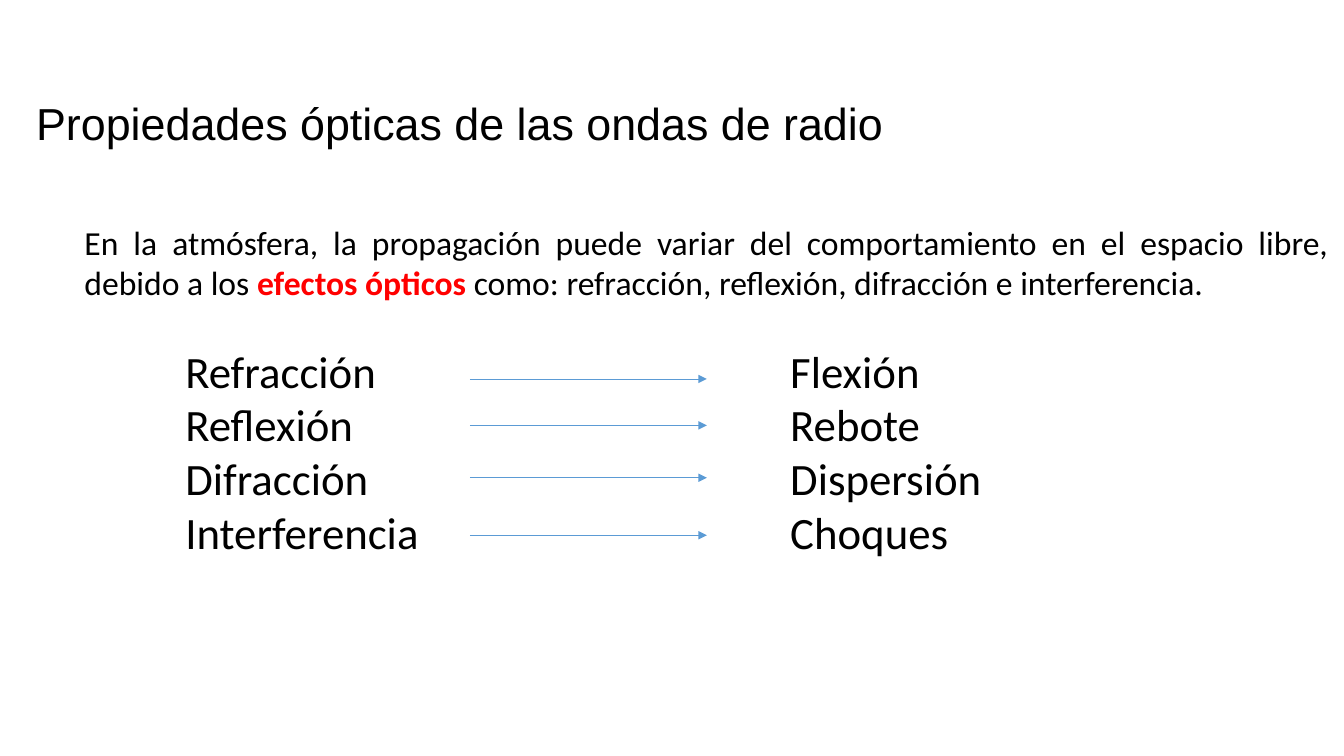
from lxml.etree import SubElement
from pptx import Presentation
from pptx.dml.color import RGBColor
from pptx.enum.shapes import MSO_CONNECTOR as Connector
from pptx.enum.text import MSO_ANCHOR as Anchor, PP_ALIGN as Align
from pptx.oxml.ns import qn
from pptx.util import Inches, Pt

WIDTH, HEIGHT = Inches(13.33), Inches(7.5)
COLORS = {"text": "000000", "accent": "FF0000", "arrow": "5B9BD5"}
TITLE_FONT = {"name": "Arial", "size": Pt(32)}
INTRO_FONT = {"name": "Calibri", "size": Pt(24)}
EFFECT_FONT = {"name": "Calibri", "size": Pt(32)}
INTRO = [
    ("En la atmósfera, la propagación puede variar del comportamiento "
     "en el espacio libre, debido a los ", "text", False),
    ("efectos ópticos ", "accent", True),
    ("como: refracción, reflexión, difracción e interferencia.", "text", False),
]
EFFECTS = [
    ("Refracción", "Flexión", 50.13),
    ("Reflexión", "Rebote", 56.27),
    ("Difracción", "Dispersión", 63.2),
    ("Interferencia", "Choques", 70.8),
]
EFFECT_TABS = (7.5, 52.51)
ARROW_SPAN = (34.96, 52.59)


def across(percent):
    return round(WIDTH * percent / 100)


def down(percent):
    return round(HEIGHT * percent / 100)


def apply_format(target, values):
    for name, value in values.items():
        setattr(target, name, value)


def add_text_frame(slide, left, top, width, height, anchor):
    box = slide.shapes.add_textbox(across(left), down(top), across(width), down(height))
    apply_format(box.text_frame, {"word_wrap": True, "vertical_anchor": anchor})
    return box.text_frame


def add_run(paragraph, text, font, color="text", bold=False):
    run = paragraph.add_run()
    run.text = text
    apply_format(run.font, {**font, "bold": bold})
    run.font.color.rgb = RGBColor.from_string(COLORS[color])


def add_tab_stops(paragraph, positions):
    tab_list = SubElement(paragraph._p.get_or_add_pPr(), qn("a:tabLst"))
    for position in positions:
        SubElement(tab_list, qn("a:tab"), pos=str(across(position)), algn="l")


def add_effect(text_frame, effect, result, gap):
    paragraph = text_frame.add_paragraph()
    add_tab_stops(paragraph, EFFECT_TABS)
    apply_format(paragraph, {"alignment": Align.JUSTIFY, "space_before": Pt(gap)})
    add_run(paragraph, f"\t{effect}\t{result}", EFFECT_FONT)


def add_arrow(group, height):
    start, end = map(across, ARROW_SPAN)
    arrow = group.shapes.add_connector(
        Connector.STRAIGHT, start, down(height), end, down(height))
    arrow.line.color.rgb = RGBColor.from_string(COLORS["arrow"])
    arrow.line.width = Pt(0.5)
    SubElement(arrow.line._get_or_add_ln(), qn("a:tailEnd"), type="triangle")
    SubElement(arrow._element.spPr, qn("a:effectLst"))


def main():
    presentation = Presentation()
    apply_format(presentation, {"slide_width": WIDTH, "slide_height": HEIGHT})
    slide = presentation.slides.add_slide(presentation.slide_layouts[6])

    title = add_text_frame(slide, 1.95, 8.27, 74.42, 16.67, Anchor.MIDDLE).paragraphs[0]
    title.line_spacing = 0.9
    add_run(title, "Propiedades ópticas de las ondas de radio", TITLE_FONT)

    body = add_text_frame(slide, 5.55, 28.67, 94.07, 46.27, Anchor.TOP)
    intro = body.paragraphs[0]
    intro.alignment = Align.JUSTIFY
    for text, color, bold in INTRO:
        add_run(intro, text, INTRO_FONT, color, bold)

    arrows = slide.shapes.add_group_shape()
    for index, (effect, result, height) in enumerate(EFFECTS):
        add_effect(body, effect, result, 0 if index else 29.3)
        add_arrow(arrows, height)

    presentation.save("out.pptx")


if __name__ == "__main__":
    main()
